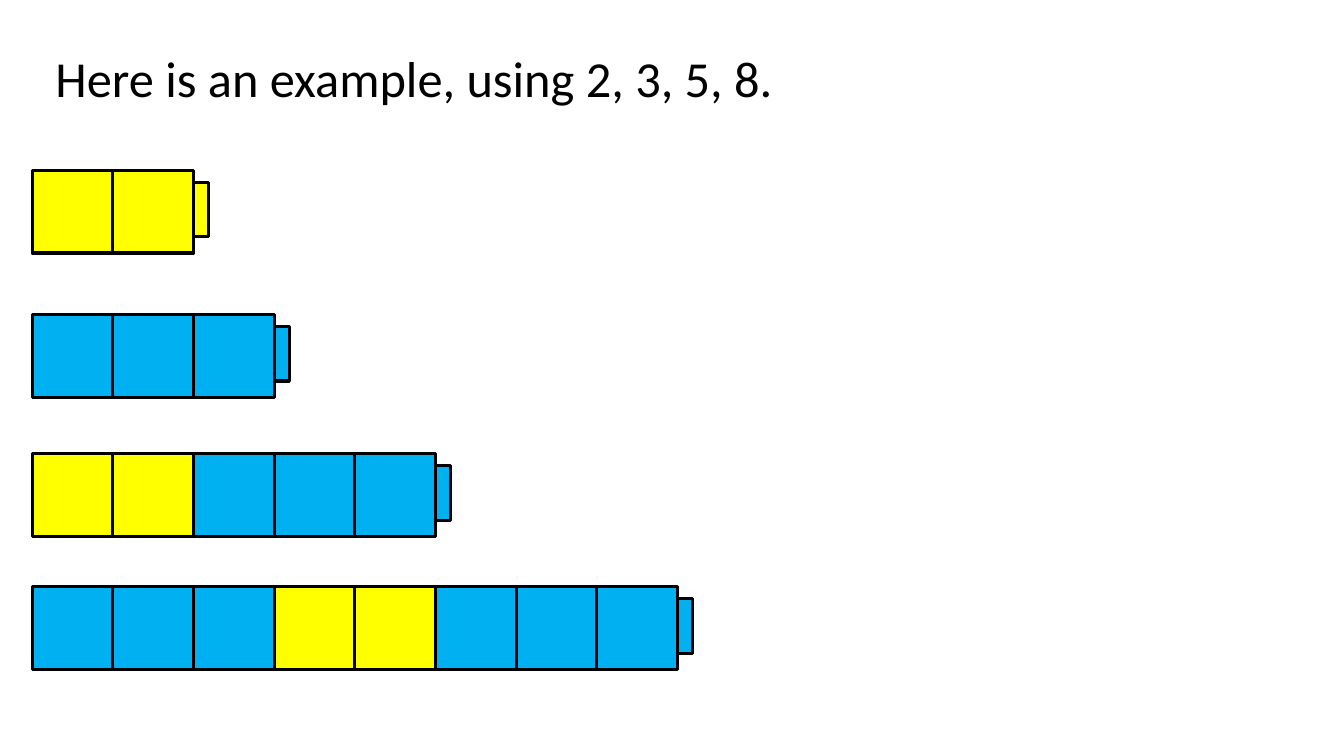
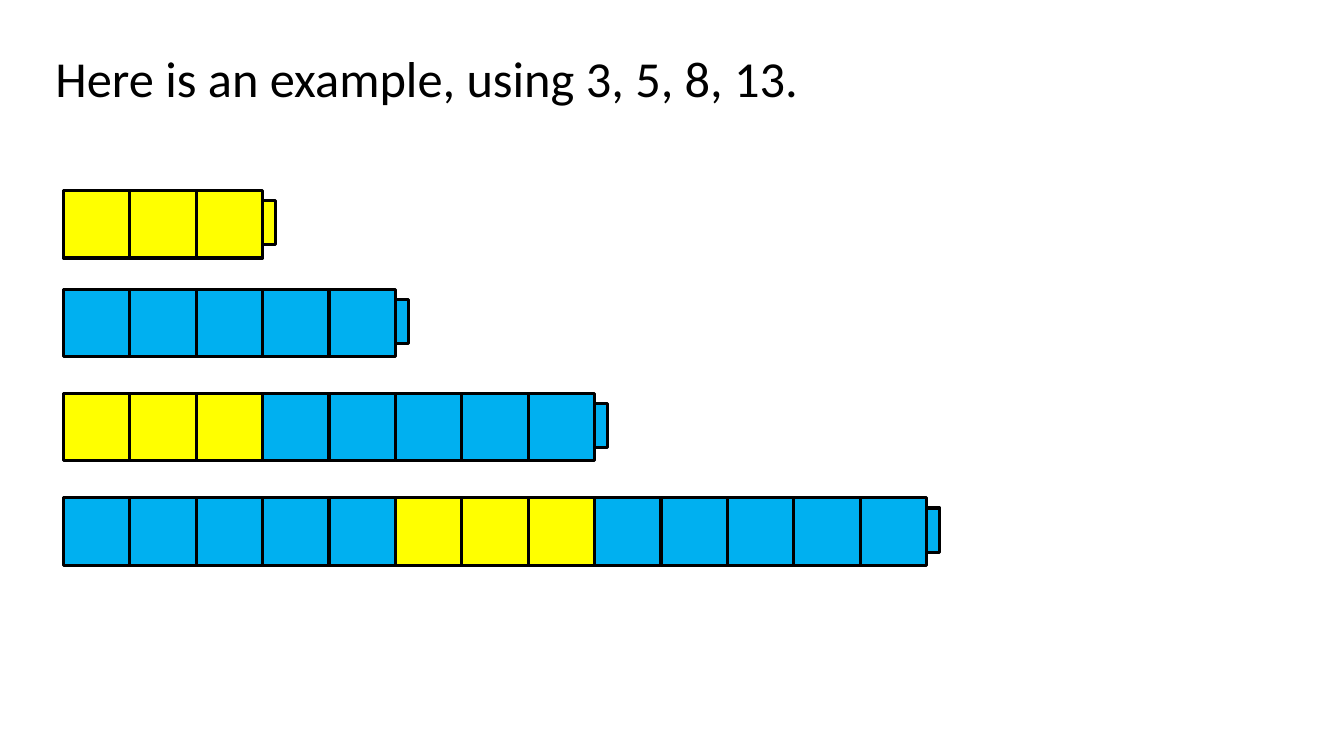
from dataclasses import dataclass

from pptx import Presentation
from pptx.dml.color import RGBColor
from pptx.enum.shapes import MSO_SHAPE
from pptx.enum.text import MSO_ANCHOR, MSO_AUTO_SIZE, PP_ALIGN
from pptx.util import Inches, Pt

RECT = MSO_SHAPE.RECTANGLE
TOP = MSO_ANCHOR.TOP
GROW = MSO_AUTO_SIZE.SHAPE_TO_FIT_TEXT
LEFT = PP_ALIGN.LEFT

COLORS = {"yellow": "FFFF00", "blue": "00B0F0", "black": "000000"}
FONT = "Calibri"
TITLE_ONLY = 5


@dataclass(frozen=True)
class Block:
    color: str
    count: int


@dataclass(frozen=True)
class Example:
    """Two starting numbers and the measures of their cube trains, in inches."""
    first: int
    second: int
    left: float
    tops: tuple[float, float, float, float]
    longest: float
    cube_height: float
    stud_inset: float
    stud_width: float
    stud_height: float

    @property
    def trains(self) -> list[list[Block]]:
        """Each train from the third on joins the two before it."""
        trains = [[Block("yellow", self.first)], [Block("blue", self.second)]]
        while len(trains) < len(self.tops):
            trains.append(trains[-2] + trains[-1])
        return trains


EXAMPLES = [
    Example(2, 3, 0.32, (1.69, 3.12, 4.5, 5.82), 6.4, 0.82, 0.12, 0.15, 0.54),
    Example(3, 5, 0.63, (1.89, 2.87, 3.9, 4.94), 8.56, 0.67, 0.1, 0.13, 0.44),
]


def train_length(train: list[Block]) -> int:
    return sum(block.count for block in train)


def add_title(s, text: str) -> None:
    title = s.shapes.title
    title.left, title.top = Inches(0.45), Inches(0.42)
    title.width, title.height = Inches(11.78), Inches(0.71)
    tf = title.text_frame
    tf.text = text
    tf.word_wrap = True
    tf.auto_size = GROW
    tf.vertical_anchor = TOP
    p = tf.paragraphs[0]
    p.alignment = LEFT
    p.font.name = FONT
    p.font.size = Pt(36)
    p.font.color.rgb = RGBColor.from_string(COLORS["black"])


def add_box(group, color: str, x: float, y: float, w: float, h: float) -> None:
    sp = group.shapes.add_shape(RECT, Inches(x), Inches(y), Inches(w), Inches(h))
    sp.shadow.inherit = False
    sp.fill.solid()
    sp.fill.fore_color.rgb = RGBColor.from_string(COLORS[color])
    sp.line.color.rgb = RGBColor.from_string(COLORS["black"])
    sp.line.width = Pt(2.25)


def add_train(s, example: Example, train: list[Block], top: float, cube_width: float) -> None:
    """Draw a row of joined cubes with the last cube's stud at its end."""
    group = s.shapes.add_group_shape()
    x = example.left
    for block in train:
        for _ in range(block.count):
            add_box(group, block.color, x, top, cube_width, example.cube_height)
            x += cube_width
    add_box(group, train[-1].color, x, top + example.stud_inset,
            example.stud_width, example.stud_height)


def add_example(prs, example: Example) -> None:
    s = prs.slides.add_slide(prs.slide_layouts[TITLE_ONLY])
    trains = example.trains
    numbers = ", ".join(str(train_length(train)) for train in trains)
    add_title(s, f"Here is an example, using {numbers}.")
    cube_width = example.longest / train_length(trains[-1])
    for train, top in zip(trains, example.tops):
        add_train(s, example, train, top, cube_width)


def main() -> None:
    prs = Presentation()
    prs.slide_width, prs.slide_height = Inches(13.33), Inches(7.5)
    for example in EXAMPLES:
        add_example(prs, example)
    prs.save("out.pptx")


if __name__ == "__main__":
    main()
